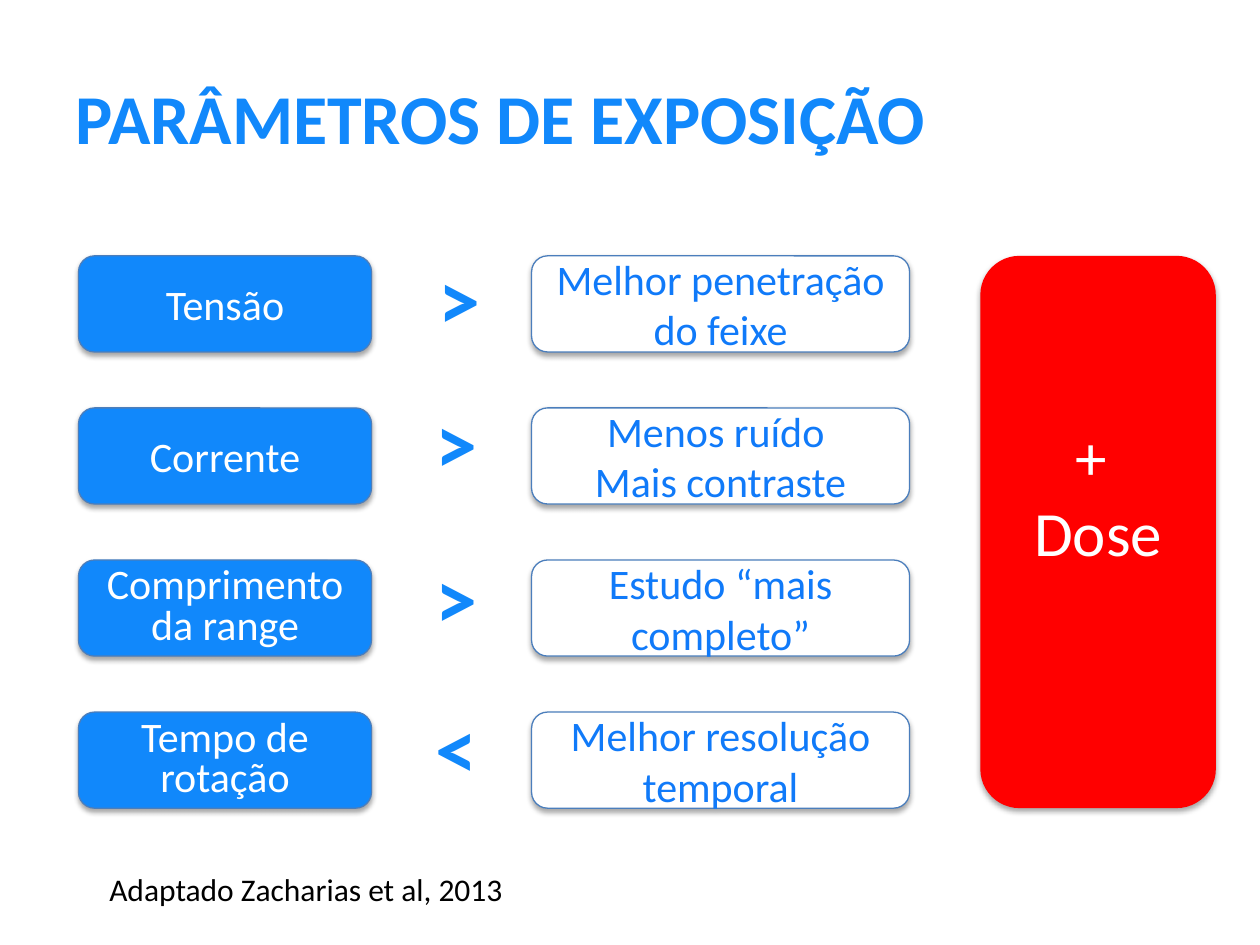
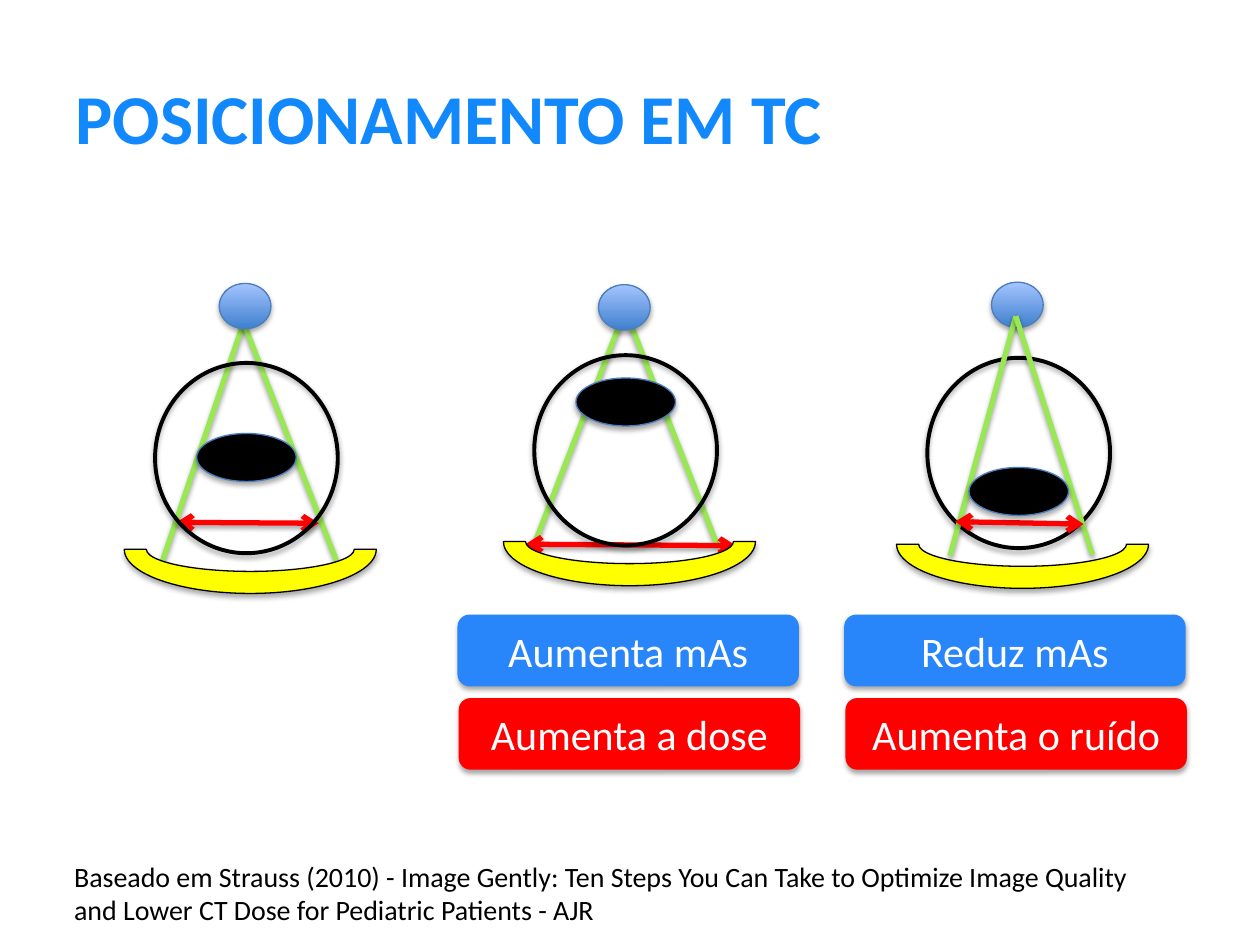
from dataclasses import dataclass
from typing import Optional

from lxml import etree
from pptx import Presentation
from pptx.dml.color import RGBColor
from pptx.enum.shapes import MSO_CONNECTOR, MSO_SHAPE
from pptx.enum.text import MSO_ANCHOR, MSO_AUTO_SIZE, PP_ALIGN
from pptx.oxml.ns import qn
from pptx.util import Pt

ROUNDED = MSO_SHAPE.ROUNDED_RECTANGLE
OVAL = MSO_SHAPE.OVAL
BLOCK_ARC = MSO_SHAPE.BLOCK_ARC
STRAIGHT = MSO_CONNECTOR.STRAIGHT
MIDDLE = MSO_ANCHOR.MIDDLE
TOP = MSO_ANCHOR.TOP
GROW = MSO_AUTO_SIZE.SHAPE_TO_FIT_TEXT
LEFT = PP_ALIGN.LEFT
CENTER = PP_ALIGN.CENTER

FONT = "Calibri"
TITLE_BLUE = "1188FB"
TEXT_BLUE = "107AF9"
BUTTON_BLUE = "2986FA"
OUTLINE_BLUE = "4B7EBC"
TUBE_DARK, TUBE_LIGHT = "3F80CE", "A4C4FF"
RED, GREEN, YELLOW = "FF0000", "99E853", "FFFF00"
BLACK, WHITE = "000000", "FFFFFF"


@dataclass(frozen=True)
class Box:
    left: float
    top: float
    width: float
    height: float

    def emu(self) -> tuple:
        return Pt(self.left), Pt(self.top), Pt(self.width), Pt(self.height)


@dataclass(frozen=True)
class TextStyle:
    size: float
    color: str
    bold: bool = False
    align: int = LEFT
    spacing: Optional[float] = None


@dataclass(frozen=True)
class Parameter:
    name: str
    sign: str
    effects: tuple
    sign_left: float
    sign_top: float
    spacing: Optional[float] = None


@dataclass(frozen=True)
class Scanner:
    left: float
    top: float
    tube_top: float
    patient_top: float
    left_beam: tuple
    right_beam: tuple
    field: tuple
    beams_in_front: bool = False


@dataclass(frozen=True)
class Consequence:
    left: float
    current: str
    result: str


PARAMETERS = (
    Parameter("Tensão", ">", ("Melhor penetração do feixe",), 243.4, 137.5),
    Parameter("Corrente", ">", ("Menos ruído ", "Mais contraste"), 241.9, 219.6),
    Parameter("Comprimento da range", ">", ("Estudo “mais completo”",), 241.9, 308.2, 0.8),
    Parameter("Tempo de rotação", "<", ("Melhor resolução temporal",), 241.9, 393.8, 0.8),
)
ROW_TOP, ROW_PITCH, ROW_HEIGHT = 146.2, 86.9, 54.9

SCANNERS = (
    Scanner(88.6, 207.4, 162, 247.7, (184.3, 92.9, 320.4), (184.3, 192.2, 320.4),
            (100.8, 298.5, 182.2, 299)),
    Scanner(305.3, 203, 162.7, 216, (180.7, 305.3, 311), (173.5, 409.7, 311),
            (300.2, 311, 420.5, 311.8)),
    Scanner(529.9, 204.5, 161.3, 267.1, (180.7, 542.9, 317.5), (180.7, 624.2, 316.8),
            (545.8, 298.1, 619.2, 299.5), True),
)
CONSEQUENCES = (
    Consequence(261.4, "Aumenta mAs", "Aumenta a dose"),
    Consequence(482.4, "Reduz mAs", "Aumenta o ruído"),
)


def rgb(value: str) -> RGBColor:
    return RGBColor.from_string(value)


def write(frame, lines: tuple, style: TextStyle) -> None:
    for index, line in enumerate(lines):
        paragraph = frame.paragraphs[0] if index == 0 else frame.add_paragraph()
        paragraph.alignment = style.align
        if style.spacing:
            paragraph.line_spacing = style.spacing
        run = paragraph.add_run()
        run.text = line
        run.font.name = FONT
        run.font.size = Pt(style.size)
        run.font.bold = style.bold
        run.font.color.rgb = rgb(style.color)


def cast_shadow(effects, opacity: int, distance: float) -> None:
    shadow = etree.SubElement(effects, qn("a:outerShdw"), blurRad=str(Pt(3.1)),
                              dist=str(Pt(distance)), dir="5400000", rotWithShape="0")
    color = etree.SubElement(shadow, qn("a:srgbClr"), val=BLACK)
    etree.SubElement(color, qn("a:alpha"), val=str(opacity * 1000))


def add_figure(slide, preset, box: Box, fill: Optional[str] = None,
               outline: Optional[str] = None, weight: float = 0.75):
    figure = slide.shapes.add_shape(preset, *box.emu())
    if fill:
        figure.fill.solid()
        figure.fill.fore_color.rgb = rgb(fill)
    else:
        figure.fill.background()
    if outline:
        figure.line.color.rgb = rgb(outline)
        figure.line.width = Pt(weight)
    else:
        figure.line.fill.background()
    figure.shadow.inherit = False
    cast_shadow(figure._element.spPr.find(qn("a:effectLst")), 35, 1.8)
    return figure


def add_button(slide, box: Box, lines: tuple, fill: str, style: TextStyle,
               outline: Optional[str] = None):
    button = add_figure(slide, ROUNDED, box, fill, outline)
    button.text_frame.word_wrap = True
    button.text_frame.vertical_anchor = MIDDLE
    write(button.text_frame, lines, style)
    return button


def add_label(slide, box: Box, text: str, style: TextStyle, wrap: bool = False) -> None:
    frame = slide.shapes.add_textbox(*box.emu()).text_frame
    frame.word_wrap = wrap
    frame.auto_size = GROW
    frame.vertical_anchor = TOP
    write(frame, (text,), style)


def add_ray(slide, ends: tuple, color: str, arrows: bool = False) -> None:
    ray = slide.shapes.add_connector(STRAIGHT, *map(Pt, ends))
    ray.line.color.rgb = rgb(color)
    ray.line.width = Pt(3)
    if arrows:
        outline = ray.line._get_or_add_ln()
        for end in ("a:headEnd", "a:tailEnd"):
            etree.SubElement(outline, qn(end), type="arrow")
    cast_shadow(etree.SubElement(ray._element.spPr, qn("a:effectLst")), 38, 1.6)


def add_titled_slide(deck, text: str):
    slide = deck.slides.add_slide(deck.slide_layouts[5])
    title = slide.shapes.title
    title.left, title.top, title.width, title.height = Box(36, 21.6, 648, 90).emu()
    title.text_frame.vertical_anchor = MIDDLE
    write(title.text_frame, (text,), TextStyle(40, TITLE_BLUE, True))
    return slide


def draw_parameter(slide, row: int, parameter: Parameter) -> None:
    top = ROW_TOP + row * ROW_PITCH
    add_button(slide, Box(44.9, top, 167.4, ROW_HEIGHT), (parameter.name,), TITLE_BLUE,
               TextStyle(24, WHITE, align=CENTER, spacing=parameter.spacing), OUTLINE_BLUE)
    add_button(slide, Box(303.8, top, 216, ROW_HEIGHT), parameter.effects, WHITE,
               TextStyle(24, TEXT_BLUE, align=CENTER), OUTLINE_BLUE)
    add_label(slide, Box(parameter.sign_left, parameter.sign_top, 38.9, 65.5),
              parameter.sign, TextStyle(48, TITLE_BLUE, True))


def draw_beams(slide, scanner: Scanner) -> None:
    for apex_top, end_left, end_top in (scanner.left_beam, scanner.right_beam):
        add_ray(slide, (scanner.left + 50.6, apex_top, end_left, end_top), GREEN)
    add_ray(slide, scanner.field, RED, arrows=True)
    add_figure(slide, OVAL, Box(scanner.left + 23.8, scanner.patient_top, 56.9, 27.4),
               BLACK, OUTLINE_BLUE)


def draw_gantry(slide, scanner: Scanner) -> None:
    add_figure(slide, OVAL, Box(scanner.left, scanner.top, 104.4, 108.7),
               outline=BLACK, weight=2.25)
    detector = add_figure(slide, BLOCK_ARC, Box(scanner.left - 17.6, scanner.top + 81.3, 144, 50.4),
                          YELLOW, BLACK)
    detector.rotation = 180
    tube = add_figure(slide, OVAL, Box(scanner.left + 36.7, scanner.tube_top, 29.5, 25.9),
                      TUBE_DARK, OUTLINE_BLUE)
    tube.fill.gradient()
    tube.fill.gradient_angle = 90
    for stop, position, color in zip(tube.fill.gradient_stops, (0, 1), (TUBE_DARK, TUBE_LIGHT)):
        stop.position = position
        stop.color.rgb = rgb(color)


def draw_scanner(slide, scanner: Scanner) -> None:
    layers = (draw_gantry, draw_beams) if scanner.beams_in_front else (draw_beams, draw_gantry)
    for draw in layers:
        draw(slide, scanner)


def build_exposure(deck) -> None:
    slide = add_titled_slide(deck, "PARÂMETROS DE EXPOSIÇÃO")
    add_label(slide, Box(55.4, 493.9, 240.5, 28.8), "Adaptado Zacharias et al, 2013",
              TextStyle(18, BLACK))
    dose = add_button(slide, Box(560.2, ROW_TOP, 134.6, 3 * ROW_PITCH + ROW_HEIGHT),
                      ("+ ", "Dose"), RED, TextStyle(36, WHITE, align=CENTER))
    dose.text_frame.margin_bottom = Pt(47.6)
    for row, parameter in enumerate(PARAMETERS):
        draw_parameter(slide, row, parameter)


def build_positioning(deck) -> None:
    slide = add_titled_slide(deck, "POSICIONAMENTO EM TC")
    for scanner in SCANNERS:
        draw_scanner(slide, scanner)
    style = TextStyle(24, WHITE, align=CENTER)
    for item in CONSEQUENCES:
        add_button(slide, Box(item.left, 351.2, 195.1, 41), (item.current,), BUTTON_BLUE, style)
        add_button(slide, Box(item.left + 0.7, 398.9, 195.1, 41), (item.result,), RED, style)
    add_label(slide, Box(35.3, 487.4, 643, 46.1),
              "Baseado em Strauss (2010) - Image Gently: Ten Steps You Can Take to Optimize "
              "Image Quality and Lower CT Dose for Pediatric Patients - AJR",
              TextStyle(16, BLACK), wrap=True)


def main() -> None:
    deck = Presentation()
    deck.slide_width, deck.slide_height = Pt(720), Pt(540)
    build_exposure(deck)
    build_positioning(deck)
    deck.save("out.pptx")


if __name__ == "__main__":
    main()
